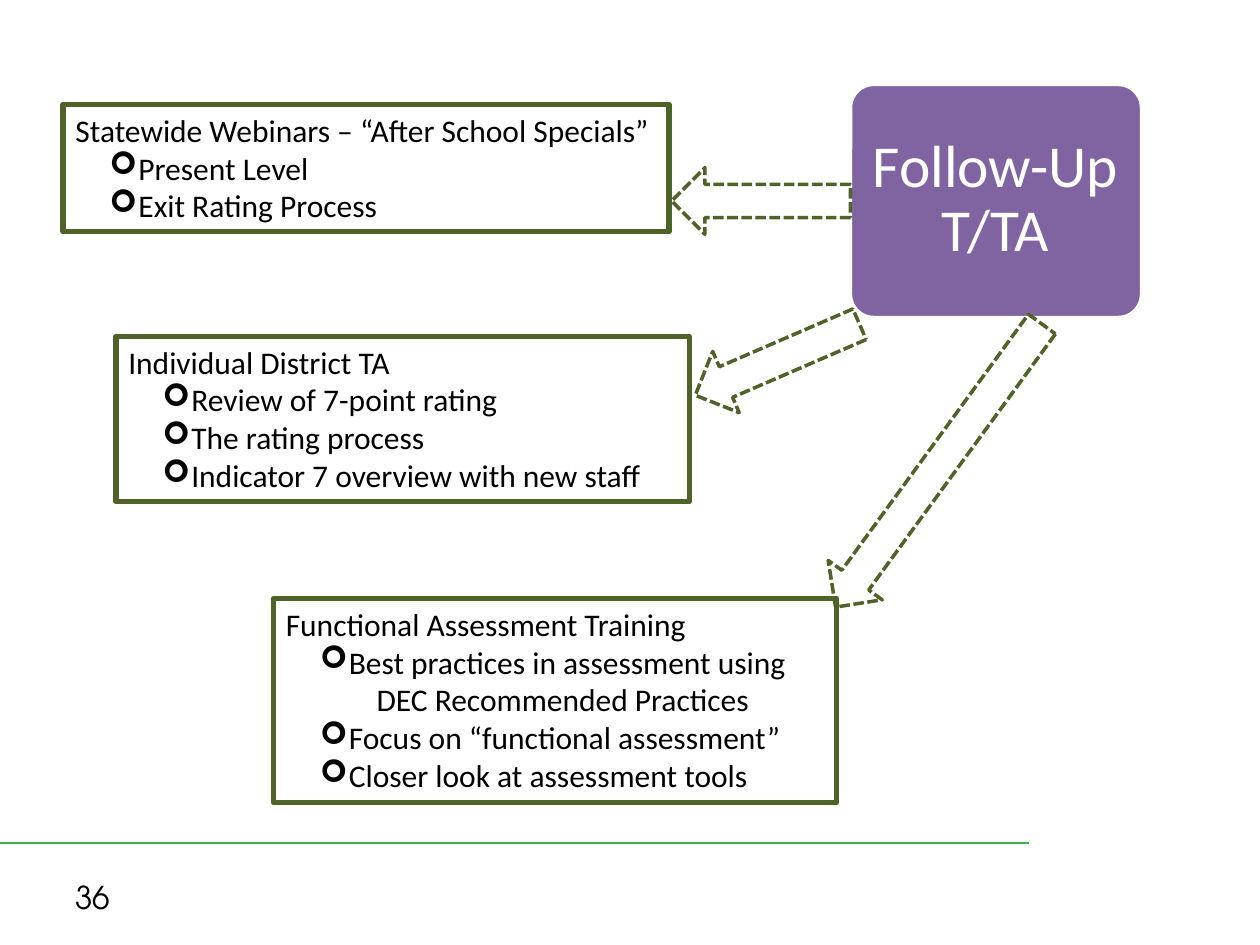
"""Build the follow-up training and technical assistance slide."""
from lxml import etree
from pptx import Presentation
from pptx.dml.color import RGBColor
from pptx.enum import dml, shapes, text
from pptx.oxml import ns
from pptx.util import Inches, Pt

GREEN = RGBColor(0x4F, 0x62, 0x28)
RULE_GREEN = RGBColor(0x39, 0xB5, 0x4A)
PURPLE = RGBColor(0x80, 0x64, 0xA2)
WHITE = RGBColor(0xFF, 0xFF, 0xFF)
BLACK = RGBColor(0, 0, 0)

BULLET = "➢"
INDENT = 0.5
HANGING = 0.23
CONTINUED_INDENT = 0.72

TOPICS = [
    ((0.5, 0.83, 4.81, 1.01), "Statewide Webinars – “After School Specials”",
     [(BULLET, "Present Level"), (BULLET, "Exit Rating Process")]),
    ((0.92, 2.67, 4.55, 1.31), "Individual District TA",
     [(BULLET, "Review of 7-point rating"), (BULLET, "The rating process"),
      (BULLET, "Indicator 7 overview with new staff")]),
    ((2.17, 4.75, 4.47, 1.62), "Functional Assessment Training",
     [(BULLET, "Best practices in assessment using"),
      (None, "DEC Recommended Practices"),
      (BULLET, "Focus on “functional assessment”"),
      (BULLET, "Closer look at assessment tools")]),
]
ARROWS = [
    ((5.33, 1.33, 1.42, 0.53), 180),
    ((6.06, 3.43, 2.78, 0.53), 126.1),
    ((5.46, 2.59, 1.42, 0.53), 156.6),
]
HUB = (6.75, 0.67, 2.31, 1.85)
HUB_TEXT = (6.8, 0.72, 2.2, 1.74)
PAGE_NUMBER = (0.5, 6.92, 2.33, 0.4)


def place(bounds):
    return [Inches(value) for value in bounds]


def write(para, words, size=18, font="Calibri", color=BLACK, indent=0, bullet=None):
    if indent:
        settings = para._p.get_or_add_pPr()
        settings.set("marL", str(Inches(indent)))
        settings.set("indent", str(Inches(-HANGING if bullet else 0)))
        if bullet:
            etree.SubElement(settings, ns.qn("a:buFont")).set("typeface", "Wingdings")
            etree.SubElement(settings, ns.qn("a:buChar")).set("char", bullet)
    span = para.add_run()
    span.text = words
    span.font.size = Pt(size)
    span.font.name = font
    span.font.color.rgb = color


def add_label(page, bounds, words, inset=None, align=None, spacing=None, **style):
    frame = page.shapes.add_textbox(*place(bounds)).text_frame
    frame.word_wrap = True
    frame.vertical_anchor = text.MSO_ANCHOR.MIDDLE
    if inset is not None:
        frame.margin_left = frame.margin_right = Inches(inset)
        frame.margin_top = frame.margin_bottom = Inches(inset)
    para = frame.paragraphs[0]
    para.alignment = align
    para.line_spacing = spacing
    write(para, words, **style)


def add_topic(page, bounds, heading, items):
    box = page.shapes.add_textbox(*place(bounds))
    box.line.color.rgb = GREEN
    box.line.width = Pt(3)
    frame = box.text_frame
    frame.word_wrap = False
    frame.auto_size = text.MSO_AUTO_SIZE.SHAPE_TO_FIT_TEXT
    write(frame.paragraphs[0], heading)
    for bullet, words in items:
        para = frame.add_paragraph()
        para.level = 1
        write(para, words, bullet=bullet,
              indent=INDENT if bullet else CONTINUED_INDENT)


def add_arrow(page, bounds, rotation):
    arrow = page.shapes.add_shape(shapes.MSO_SHAPE.RIGHT_ARROW, *place(bounds))
    arrow.rotation = rotation
    arrow.shadow.inherit = False
    arrow.fill.background()
    arrow.line.color.rgb = GREEN
    arrow.line.width = Pt(2)
    arrow.line.dash_style = dml.MSO_LINE.SQUARE_DOT
    arrow.line._ln.find(ns.qn("a:prstDash")).set("val", "sysDash")


def add_hub(page):
    hub = page.shapes.add_shape(shapes.MSO_SHAPE.ROUNDED_RECTANGLE, *place(HUB))
    hub.adjustments[0] = 0.1
    hub.shadow.inherit = False
    hub.fill.solid()
    hub.fill.fore_color.rgb = PURPLE
    hub.line.color.rgb = WHITE
    hub.line.width = Pt(2)
    add_label(page, HUB_TEXT, "Follow-Up T/TA", inset=0.07, spacing=0.9,
              align=text.PP_ALIGN.CENTER, size=34, color=WHITE)


def add_footer(page):
    rule = page.shapes.add_connector(
        shapes.MSO_CONNECTOR.STRAIGHT, *place((0, 6.69, 8.17, 6.69)))
    rule.line.color.rgb = RULE_GREEN
    rule.line.width = Pt(1.5)
    etree.SubElement(rule._element.spPr, ns.qn("a:effectLst"))
    add_label(page, PAGE_NUMBER, "36", font="TeX Gyre Adventor")


def main():
    deck = Presentation()
    deck.slide_width, deck.slide_height = Inches(10), Inches(7.5)
    page = deck.slides.add_slide(deck.slide_layouts[6])
    add_footer(page)
    add_hub(page)
    for topic in TOPICS:
        add_topic(page, *topic)
    for arrow in ARROWS:
        add_arrow(page, *arrow)
    deck.save("out.pptx")


if __name__ == "__main__":
    main()
